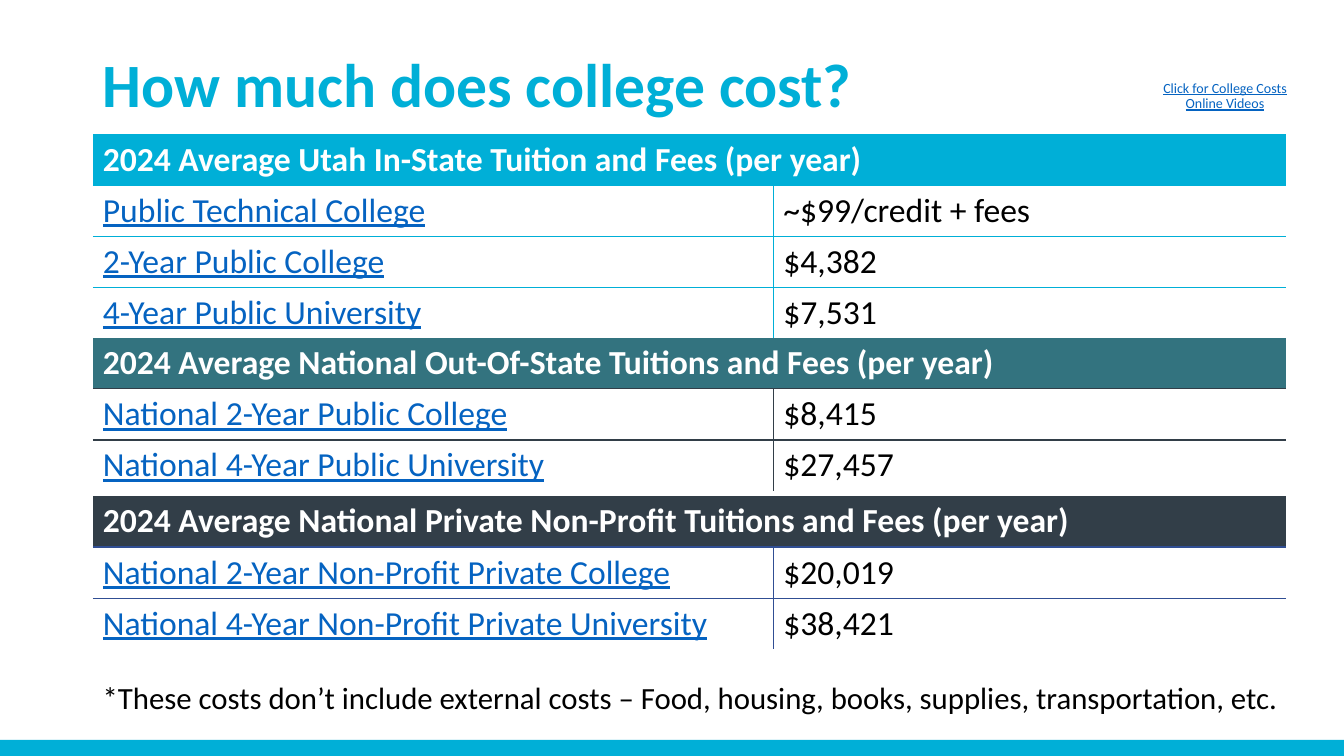
from dataclasses import dataclass

import pptx
import pptx.dml.color
import pptx.enum.shapes
import pptx.enum.text
import pptx.oxml
import pptx.oxml.ns
import pptx.util

Inches = pptx.util.Inches
Align = pptx.enum.text.PP_ALIGN
Anchor = pptx.enum.text.MSO_ANCHOR


@dataclass(frozen=True)
class Theme:
    """Colours, type and measures of the slide."""
    cyan: str = "00AFD7"
    teal: str = "33737F"
    slate: str = "323E48"
    blue: str = "304E93"
    link: str = "0563C1"
    black: str = "000000"
    white: str = "FFFFFF"
    font: str = "Calibri"
    title_size: int = 44
    table_size: int = 24
    note_size: int = 22
    link_size: int = 10
    left: float = 0.92
    row_height: float = 0.5
    columns: tuple = (6.75, 5.08)
    plain_table: str = "{2D5ABB26-0587-4C30-8999-92F81FD0307C}"


THEME = Theme()

COST_TABLES = [
    (1.33, THEME.cyan, THEME.cyan, "2024 Average Utah In-State Tuition and Fees (per year)", [
        ("Public Technical College", "~$99/credit + fees"),
        ("2-Year Public College", "$4,382"),
        ("4-Year Public University", "$7,531"),
    ]),
    (3.35, THEME.teal, THEME.slate, "2024 Average National Out-Of-State Tuitions and Fees (per year)", [
        ("National 2-Year Public College", "$8,415"),
        ("National 4-Year Public University", "$27,457"),
    ]),
    (4.92, THEME.slate, THEME.blue, "2024 Average National Private Non-Profit Tuitions and Fees (per year)", [
        ("National 2-Year Non-Profit Private College", "$20,019"),
        ("National 4-Year Non-Profit Private University", "$38,421"),
    ]),
]


def rgb(color):
    """Turn a hex string into a colour."""
    return pptx.dml.color.RGBColor.from_string(color)


def write(frame, text, size, color, bold=False, underline=False, align=Align.LEFT, spacing=1.0):
    """Write one formatted paragraph into a text frame."""
    frame.word_wrap = True
    paragraph = frame.paragraphs[0]
    paragraph.alignment = align
    paragraph.line_spacing = spacing
    run = paragraph.add_run()
    run.text = text
    formats = {"name": THEME.font, "size": pptx.util.Pt(size), "bold": bold, "underline": underline}
    for name, value in formats.items():
        setattr(run.font, name, value)
    run.font.color.rgb = rgb(color)


def add_borders(cell, sides, color):
    """Draw one-point borders on the given sides, in L, R, T, B order."""
    properties = cell._tc.get_or_add_tcPr()
    for index, side in enumerate(sides):
        properties.insert(index, pptx.oxml.parse_xml(
            f'<a:ln{side} {pptx.oxml.ns.nsdecls("a")} w="12700"><a:solidFill>'
            f'<a:srgbClr val="{color}"/></a:solidFill></a:ln{side}>'))


def add_title(slide, left, top, width, height):
    """Place and format the slide title."""
    title = slide.shapes.title
    box = {"left": left, "top": top, "width": width, "height": height}
    for name, value in box.items():
        setattr(title, name, Inches(value))
    frame = title.text_frame
    frame.auto_size = pptx.enum.text.MSO_AUTO_SIZE.NONE
    frame.vertical_anchor = Anchor.MIDDLE
    write(frame, "How much does college cost?", THEME.title_size, THEME.cyan, bold=True, spacing=0.9)


def add_cost_table(slide, left, top, header_color, line_color, heading, costs):
    """Add a table with a merged heading and one row for each cost."""
    count = len(costs) + 1
    graphic = slide.shapes.add_table(
        count, 2, Inches(left), Inches(top),
        Inches(sum(THEME.columns)), Inches(THEME.row_height * count))
    table = graphic.table
    table.first_row = table.horz_banding = False
    for style in table._tbl.iter(pptx.oxml.ns.qn("a:tableStyleId")):
        style.text = THEME.plain_table
    for column, width in zip(table.columns, THEME.columns):
        column.width = Inches(width)

    header = table.cell(0, 0)
    header.merge(table.cell(0, 1))
    for cell in (header, table.cell(0, 1)):
        cell.fill.solid()
        cell.fill.fore_color.rgb = rgb(header_color)
    write(header.text_frame, heading, THEME.table_size, THEME.white, bold=True)

    for row, (school, cost) in enumerate(costs, 1):
        bottom = "B" if row < len(costs) else ""
        cells = [(school, THEME.link, True, "RT"), (cost, THEME.black, False, "LT")]
        for column, (text, color, underline, sides) in enumerate(cells):
            cell = table.cell(row, column)
            cell.fill.background()
            write(cell.text_frame, text, THEME.table_size, color, underline=underline)
            add_borders(cell, sides + bottom, line_color)


def add_text(slide, left, top, width, height, text, anchor, **formats):
    """Add a text box with a single paragraph."""
    box = slide.shapes.add_textbox(Inches(left), Inches(top), Inches(width), Inches(height))
    box.text_frame.vertical_anchor = anchor
    write(box.text_frame, text, spacing=0.9, **formats)


def add_footer_bar(slide, left, top, width, height):
    """Add the coloured bar along the bottom edge."""
    bar = slide.shapes.add_shape(
        pptx.enum.shapes.MSO_SHAPE.RECTANGLE,
        Inches(left), Inches(top), Inches(width), Inches(height))
    bar.shadow.inherit = False
    bar.fill.solid()
    bar.fill.fore_color.rgb = rgb(THEME.cyan)
    bar.line.fill.background()


def main():
    """Build and save the college cost slide."""
    presentation = pptx.Presentation()
    presentation.slide_width, presentation.slide_height = Inches(13.33), Inches(7.5)
    slide = presentation.slides.add_slide(presentation.slide_layouts[5])
    add_footer_bar(slide, 0, 7.34, 13.33, 0.16)
    add_title(slide, THEME.left, 0.4, 11.5, 0.93)
    for cost_table in COST_TABLES:
        add_cost_table(slide, THEME.left, *cost_table)
    add_text(slide, THEME.left, 6.73, 12.03, 0.57,
             "*These costs don’t include external costs – Food, housing, books, supplies, transportation, etc.",
             Anchor.TOP, size=THEME.note_size, color=THEME.black)
    add_text(slide, 11.35, 0.67, 1.6, 0.57, "Click for College Costs Online Videos",
             Anchor.MIDDLE, size=THEME.link_size, color=THEME.link, underline=True, align=Align.CENTER)
    presentation.save("out.pptx")


if __name__ == "__main__":
    main()
